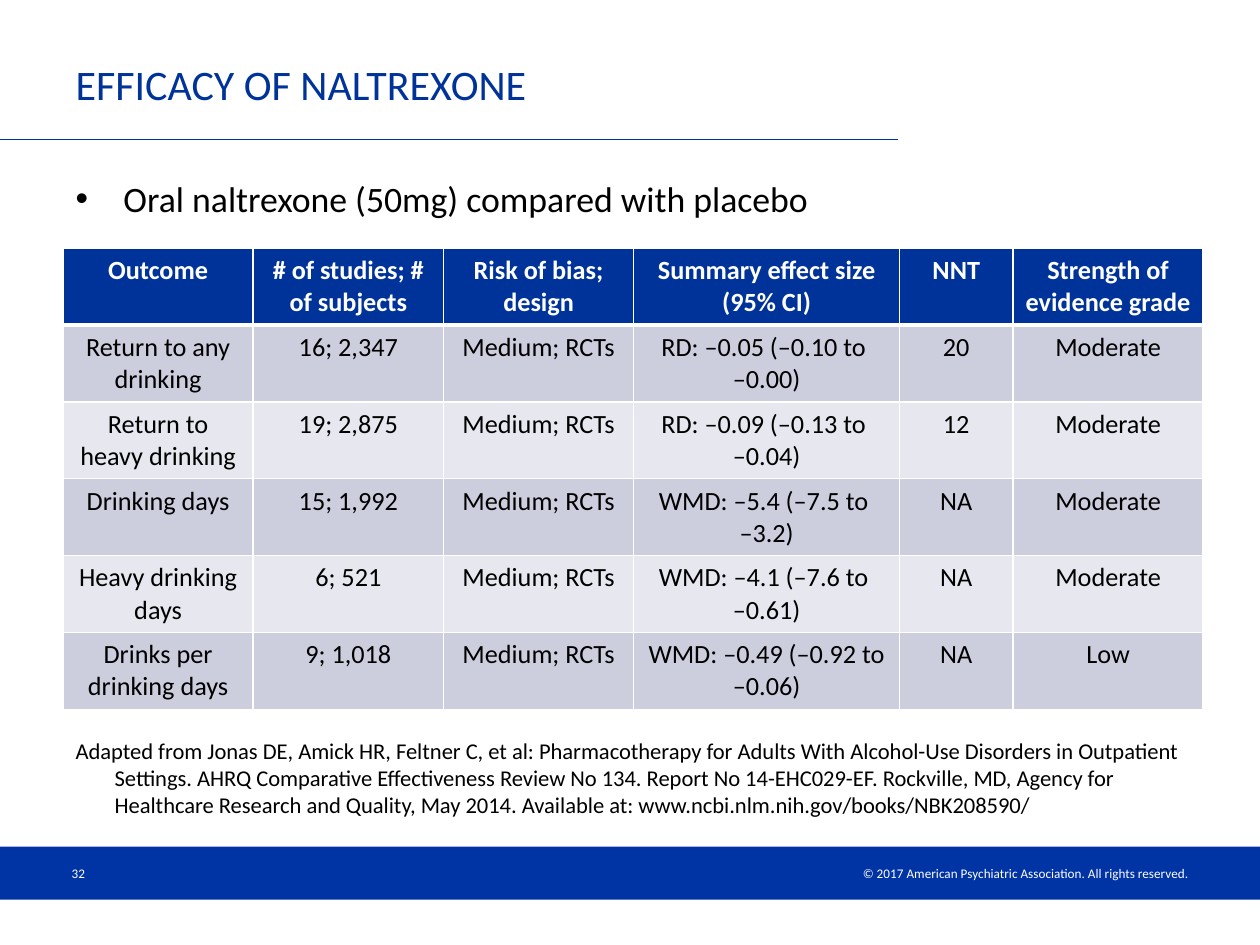
from dataclasses import dataclass

from lxml import etree
from pptx import Presentation
from pptx.dml.color import RGBColor
from pptx.enum.shapes import MSO_CONNECTOR, MSO_SHAPE
from pptx.enum.text import MSO_ANCHOR, MSO_AUTO_SIZE, PP_ALIGN
from pptx.oxml.ns import qn
from pptx.util import Inches, Pt

LEFT, CENTER, RIGHT = PP_ALIGN.LEFT, PP_ALIGN.CENTER, PP_ALIGN.RIGHT
MIDDLE = MSO_ANCHOR.MIDDLE
NO_AUTOFIT = MSO_AUTO_SIZE.NONE
RECTANGLE = MSO_SHAPE.RECTANGLE
STRAIGHT = MSO_CONNECTOR.STRAIGHT

FONT = "Calibri"
COLORS = {
    "navy": "003399",
    "footer": "0033A3",
    "dark_band": "CCCEDE",
    "light_band": "E7E8EF",
    "white": "FFFFFF",
    "black": "000000",
}

COLUMN_WIDTHS = [1.51, 1.51, 1.51, 2.11, 0.9, 1.51]
ROW_HEIGHT = 0.61
HEADINGS = [
    "Outcome", "# of studies; # of subjects", "Risk of bias; design",
    "Summary effect size (95% CI)", "NNT", "Strength of evidence grade",
]
CITATION = (
    "Adapted from Jonas DE, Amick HR, Feltner C, et al: Pharmacotherapy for "
    "Adults With Alcohol-Use Disorders in Outpatient Settings. AHRQ Comparative "
    "Effectiveness Review No 134. Report No 14-EHC029-EF. Rockville, MD, Agency "
    "for Healthcare Research and Quality, May 2014. Available at: "
    "www.ncbi.nlm.nih.gov/books/NBK208590/"
)


@dataclass
class Finding:
    outcome: str
    studies: str
    effect_lines: tuple[str, str]
    nnt: str
    grade: str = "Moderate"
    design: str = "Medium; RCTs"

    def cells(self) -> list[tuple[str, ...]]:
        """Return the paragraphs of each cell, in column order."""
        return [(self.outcome,), (self.studies,), (self.design,),
                self.effect_lines, (self.nnt,), (self.grade,)]


@dataclass
class FooterLabel:
    text: str
    left: float
    width: float
    align: PP_ALIGN


FINDINGS = [
    Finding("Return to any drinking", "16; 2,347",
            ("RD: –0.05 (–0.10 to ", "–0.00)"), "20"),
    Finding("Return to heavy drinking", "19; 2,875",
            ("RD: –0.09 (–0.13 to ", "–0.04)"), "12"),
    Finding("Drinking days", "15; 1,992",
            ("WMD: –5.4 (–7.5 to ", "–3.2)"), "NA"),
    Finding("Heavy drinking days", "6; 521",
            ("WMD: –4.1 (–7.6 to ", "–0.61)"), "NA"),
    Finding("Drinks per drinking days", "9; 1,018",
            ("WMD: –0.49 (–0.92 to ", "–0.06)"), "NA", "Low"),
]
FOOTER_LABELS = [
    FooterLabel("© 2017 American Psychiatric Association. All rights reserved.",
                5.16, 4.37, RIGHT),
    FooterLabel("32", 0.47, 2.33, LEFT),
]


def rgb(name: str) -> RGBColor:
    return RGBColor.from_string(COLORS[name])


def add_run(para, text: str, size: float, color: str, bold: bool = False) -> None:
    run = para.add_run()
    run.text = text
    run.font.name = FONT
    run.font.size = Pt(size)
    run.font.bold = bold
    run.font.color.rgb = rgb(color)


def place(shape, left: float, top: float, width: float, height: float) -> None:
    shape.left, shape.top = Inches(left), Inches(top)
    shape.width, shape.height = Inches(width), Inches(height)


def set_hanging_indent(para, indent: float, bullet: str = "") -> None:
    properties = para._p.get_or_add_pPr()
    properties.set("marL", str(Inches(indent)))
    properties.set("indent", str(-Inches(indent)))
    if bullet:
        etree.SubElement(properties, qn("a:buChar")).set("char", bullet)
    else:
        etree.SubElement(properties, qn("a:buNone"))


def set_borders(cell, bottom_width: float) -> None:
    properties = cell._tc.get_or_add_tcPr()
    for side, width in (("L", 1), ("R", 1), ("T", 1), ("B", bottom_width)):
        line = etree.SubElement(properties, qn(f"a:ln{side}"))
        line.set("w", str(Pt(width)))
        fill = etree.SubElement(line, qn("a:solidFill"))
        etree.SubElement(fill, qn("a:srgbClr")).set("val", COLORS["white"])


def fill_cell(cell, lines: tuple[str, ...], fill: str, header: bool) -> None:
    set_borders(cell, 3 if header else 1)
    cell.fill.solid()
    cell.fill.fore_color.rgb = rgb(fill)
    frame = cell.text_frame
    for index, line in enumerate(lines):
        para = frame.add_paragraph() if index else frame.paragraphs[0]
        para.alignment = CENTER
        add_run(para, line, 15, "white" if header else "black", header)


def add_findings_table(slide) -> None:
    rows = [[(heading,) for heading in HEADINGS]]
    rows += [finding.cells() for finding in FINDINGS]
    table = slide.shapes.add_table(
        len(rows), len(HEADINGS), Inches(0.5), Inches(1.97),
        Inches(sum(COLUMN_WIDTHS)), Inches(ROW_HEIGHT * len(rows))).table
    for column, width in zip(table.columns, COLUMN_WIDTHS):
        column.width = Inches(width)
    for index, row in enumerate(rows):
        table.rows[index].height = Inches(ROW_HEIGHT)
        band = "dark_band" if index % 2 else "light_band"
        for column, lines in enumerate(row):
            fill_cell(table.cell(index, column), lines,
                      band if index else "navy", index == 0)


def add_footer(slide) -> None:
    top, height = 6.72, 0.42
    bar = slide.shapes.add_shape(
        RECTANGLE, 0, Inches(top), Inches(10), Inches(height))
    bar.shadow.inherit = False
    bar.fill.solid()
    bar.fill.fore_color.rgb = rgb("footer")
    bar.line.fill.background()
    for label in FOOTER_LABELS:
        box = slide.shapes.add_textbox(
            Inches(label.left), Inches(top), Inches(label.width), Inches(height))
        frame = box.text_frame
        frame.word_wrap = True
        frame.vertical_anchor = MIDDLE
        frame.paragraphs[0].alignment = label.align
        add_run(frame.paragraphs[0], label.text, 7.5, "white")


def add_title_rule(slide) -> None:
    rule = slide.shapes.add_connector(
        STRAIGHT, 0, Inches(1.11), Inches(7.13), Inches(1.11))
    rule.line.color.rgb = rgb("navy")
    rule.line.width = Pt(0.75)
    etree.SubElement(rule._element.spPr, qn("a:effectLst"))


def fill_title(title) -> None:
    place(title, 0.5, 0.34, 6.63, 0.64)
    frame = title.text_frame
    frame.auto_size = NO_AUTOFIT
    frame.vertical_anchor = MIDDLE
    frame.paragraphs[0].alignment = LEFT
    add_run(frame.paragraphs[0], "EFFICACY OF NALTREXONE", 24, "navy")


def fill_body(body) -> None:
    """Write the lead bullet above the table and the citation below it."""
    place(body, 0.5, 1.35, 9.05, 5.13)
    frame = body.text_frame
    frame.auto_size = NO_AUTOFIT
    lead, citation = frame.paragraphs[0], frame.add_paragraph()
    lead.space_before = Pt(0)
    set_hanging_indent(lead, 0.38, "•")
    add_run(lead, "Oral naltrexone (50mg) compared with placebo", 20.4, "black")
    citation.space_before = Pt(296)
    set_hanging_indent(citation, 0.31)
    add_run(citation, CITATION, 12.9, "black")


def main() -> None:
    deck = Presentation()
    deck.slide_width, deck.slide_height = Inches(10), Inches(7.5)
    slide = deck.slides.add_slide(deck.slide_layouts[1])
    add_footer(slide)
    add_title_rule(slide)
    fill_title(slide.shapes.title)
    fill_body(slide.placeholders[1])
    add_findings_table(slide)
    deck.save("out.pptx")


if __name__ == "__main__":
    main()
